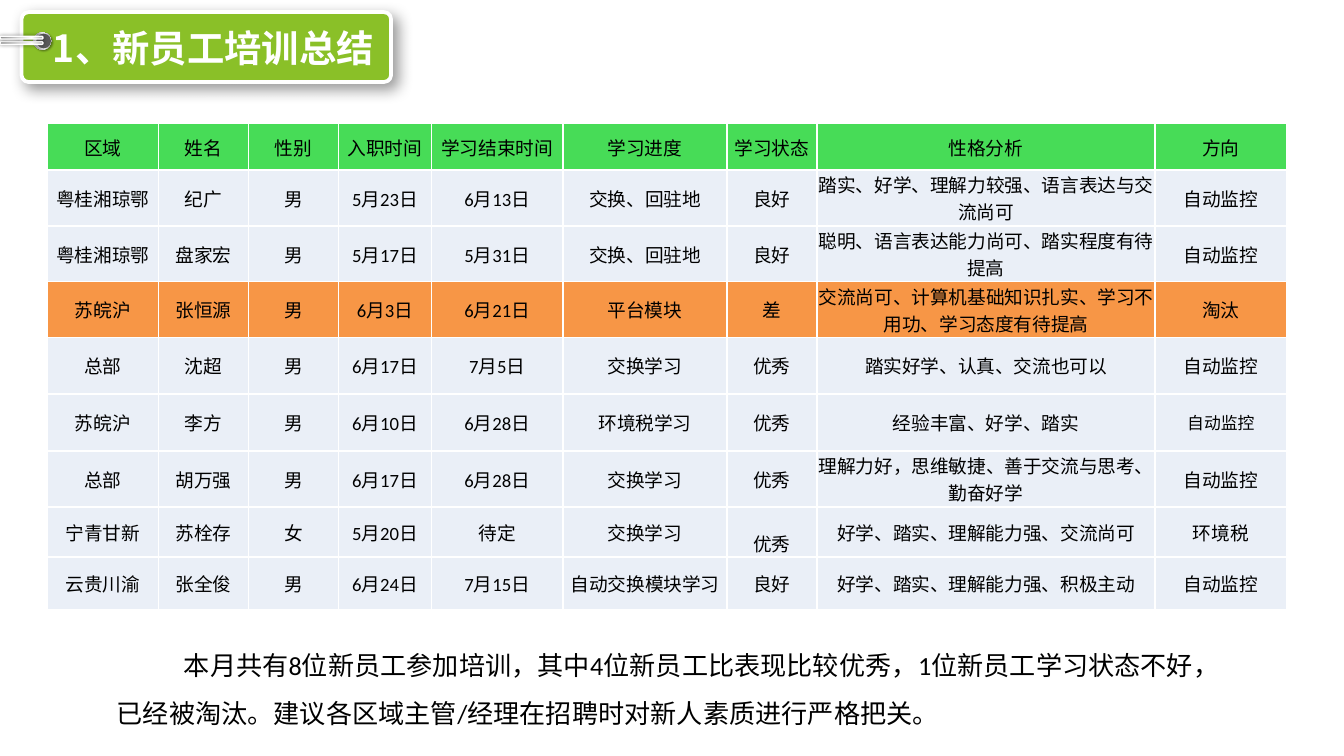
"""Build the new-employee training summary slide."""
from typing import NamedTuple

from lxml.etree import SubElement
from pptx import Presentation
from pptx.dml.color import RGBColor as RGB
from pptx.enum.shapes import MSO_SHAPE as SHAPE
from pptx.enum.text import MSO_ANCHOR as ANCHOR
from pptx.enum.text import MSO_AUTO_SIZE as FIT
from pptx.enum.text import PP_ALIGN as ALIGN
from pptx.oxml.ns import qn
from pptx.util import Pt

PX = 4572
WHITE = RGB(0xFF, 0xFF, 0xFF)
BLACK = RGB(0, 0, 0)
LIME = RGB(0x8A, 0xC0, 0x28)
GREEN = RGB(0x47, 0xDC, 0x57)
PALE = RGB(0xEA, 0xEF, 0xF7)
ORANGE = RGB(0xF7, 0x96, 0x46)
DARK = RGB(0x59, 0x59, 0x59)
GREY = RGB(0x80, 0x80, 0x80)
STEEL = RGB(0xA6, 0xA6, 0xA6)
SILVER = RGB(0xD9, 0xD9, 0xD9)
LIGHT = RGB(0xF2, 0xF2, 0xF2)
LATIN, HAN = "Calibri", "Noto Sans CJK SC"


class Box(NamedTuple):
    left: int
    top: int
    width: int
    height: int

    def emu(self) -> list[int]:
        return [n * PX for n in self]


class Shade(NamedTuple):
    blur: int
    dist: int
    angle: int


class Grad(NamedTuple):
    stops: tuple
    angle: int


class Part(NamedTuple):
    kind: SHAPE
    box: Box
    fill: RGB | Grad
    line: float = 0
    shade: Shade | None = None
    turn: int = 0
    round: float | None = None


class Style(NamedTuple):
    size: int
    color: RGB = BLACK
    font: str = LATIN
    bold: bool = False


RING = Grad(((0, WHITE), (17, STEEL), (35, LIGHT), (55, STEEL),
             (75, LIGHT), (100, STEEL)), 45)
METAL = Grad(((0, GREY), (23, STEEL), (52, SILVER), (74, WHITE), (100, STEEL)), 90)
PLATE = Part(SHAPE.ROUNDED_RECTANGLE, Box(32, 18, 550, 104), LIME, 2,
             Shade(8, 4, 45), round=0.1)
HOLE = [Part(SHAPE.OVAL, Box(50, 48, 26, 26), RING, shade=Shade(1, 1, 45), turn=270),
        Part(SHAPE.OVAL, Box(54, 50, 22, 22), DARK, turn=270)]
PINS = [Part(SHAPE.ROUNDED_RECTANGLE, Box(30, top, 4, 64), METAL, 0.75,
             Shade(2, 0, 0), 270, 0.5) for top in (32, 24)]

COLS = [166, 134, 134, 138, 196, 244, 134, 503, 196]
ROWS = [69, 83, 83, 83, 84, 85, 84, 74, 79]
DATA = [
    ("区域", "姓名", "性别", "入职时间", "学习结束时间", "学习进度", "学习状态",
     "性格分析", "方向"),
    ("粤桂湘琼鄂", "纪广", "男", "5月23日", "6月13日", "交换、回驻地", "良好",
     "踏实、好学、理解力较强、语言表达与交流尚可", "自动监控"),
    ("粤桂湘琼鄂", "盘家宏", "男", "5月17日", "5月31日", "交换、回驻地", "良好",
     "聪明、语言表达能力尚可、踏实程度有待提高", "自动监控"),
    ("苏皖沪", "张恒源", "男", "6月3日", "6月21日", "平台模块", "差",
     "交流尚可、计算机基础知识扎实、学习不用功、学习态度有待提高", "淘汰"),
    ("总部", "沈超", "男", "6月17日", "7月5日", "交换学习", "优秀",
     "踏实好学、认真、交流也可以", "自动监控"),
    ("苏皖沪", "李方", "男", "6月10日", "6月28日", "环境税学习", "优秀",
     "经验丰富、好学、踏实", "自动监控"),
    ("总部", "胡万强", "男", "6月17日", "6月28日", "交换学习", "优秀",
     "理解力好，思维敏捷、善于交流与思考、勤奋好学", "自动监控"),
    ("宁青甘新", "苏栓存", "女", "5月20日", "待定", "交换学习", "优秀",
     "好学、踏实、理解能力强、交流尚可", "环境税"),
    ("云贵川渝", "张全俊", "男", "6月24日", "7月15日", "自动交换模块学习", "良好",
     "好学、踏实、理解能力强、积极主动", "自动监控"),
]
TINTS = {0: GREEN, 3: ORANGE}
SMALL, LOW = (5, 8), (7, 6)
NOTE = ("本月共有8位新员工参加培训，其中4位新员工比表现比较优秀，1位新员工学习状态不好，"
        "已经被淘汰。建议各区域主管/经理在招聘时对新人素质进行严格把关。")


def tint(node, color: RGB):
    """Add a colour element to a node."""
    return SubElement(node, qn("a:srgbClr"), val=str(color))


def blend(shape, grad: Grad) -> None:
    """Fill a shape with a linear gradient."""
    shape.fill.gradient()
    node = shape.element.spPr.find(qn("a:gradFill"))
    stops = node.find(qn("a:gsLst"))
    for old in list(stops):
        stops.remove(old)
    for pos, color in grad.stops:
        tint(SubElement(stops, qn("a:gs"), pos=str(pos * 1000)), color)
    node.find(qn("a:lin")).set("ang", str(grad.angle * 60000))


def cast(shape, shade: Shade) -> None:
    """Give a shape a soft black outer shadow."""
    node = SubElement(shape.element.spPr.find(qn("a:effectLst")), qn("a:outerShdw"),
                      blurRad=str(Pt(shade.blur)), dist=str(Pt(shade.dist)),
                      dir=str(shade.angle * 60000), algn="ctr", rotWithShape="0")
    SubElement(tint(node, BLACK), qn("a:alpha"), val="40000")


def draw(shapes, part: Part) -> None:
    """Draw one part of the title plate."""
    shape = shapes.add_shape(part.kind, *part.box.emu())
    shape.rotation = part.turn
    shape.shadow.inherit = False
    if part.round is not None:
        shape.adjustments[0] = part.round
    if isinstance(part.fill, Grad):
        blend(shape, part.fill)
    else:
        shape.fill.solid()
        shape.fill.fore_color.rgb = part.fill
    if part.line:
        shape.line.color.rgb = WHITE
        shape.line.width = Pt(part.line)
    else:
        shape.line.fill.background()
    if part.shade:
        cast(shape, part.shade)


def write(para, text: str, style: Style) -> None:
    """Add one styled run to a paragraph."""
    run = para.add_run()
    run.text = text
    font = run.font
    font.name, font.size, font.bold = style.font, Pt(style.size), style.bold
    font.color.rgb = style.color
    SubElement(run._r.get_or_add_rPr(), qn("a:ea"), typeface=HAN)


def label(shapes, box: Box, text: str, style: Style):
    """Add a wrapping text box and return its paragraph."""
    frame = shapes.add_textbox(*box.emu()).text_frame
    frame.word_wrap = True
    frame.auto_size = FIT.SHAPE_TO_FIT_TEXT
    para = frame.paragraphs[0]
    write(para, text, style)
    return para


def edge(cell) -> None:
    """Draw white borders on all sides of a cell."""
    props = cell._tc.get_or_add_tcPr()
    for i, side in enumerate("LRTB"):
        line = SubElement(props, qn(f"a:ln{side}"), w=str(Pt(1)))
        tint(SubElement(line, qn("a:solidFill")), WHITE)
        props.insert(i, line)


def roster(shapes, left: int, top: int) -> None:
    """Draw the table of trainees."""
    box = Box(left, top, sum(COLS), sum(ROWS))
    table = shapes.add_table(len(ROWS), len(COLS), *box.emu()).table
    for col, width in zip(table.columns, COLS):
        col.width = width * PX
    for r, (row, height) in enumerate(zip(table.rows, ROWS)):
        row.height = height * PX
        for c, cell in enumerate(row.cells):
            cell.margin_left = cell.margin_right = cell.margin_top = PX
            cell.margin_bottom = 0
            cell.vertical_anchor = ANCHOR.BOTTOM if (r, c) == LOW else ANCHOR.MIDDLE
            cell.fill.solid()
            cell.fill.fore_color.rgb = TINTS.get(r, PALE)
            edge(cell)
            para = cell.text_frame.paragraphs[0]
            para.alignment = ALIGN.CENTER
            write(para, DATA[r][c], Style(9 if (r, c) == SMALL else 10))


def main() -> None:
    """Build and save the slide."""
    deck = Presentation()
    deck.slide_width, deck.slide_height = 2000 * PX, 1125 * PX
    shapes = deck.slides.add_slide(deck.slide_layouts[6]).shapes
    draw(shapes, PLATE)
    for parts in (HOLE, PINS):
        group = shapes.add_group_shape()
        for part in parts:
            draw(group.shapes, part)
    title = label(shapes, Box(32, 28, 572, 88), "1、新员工培训总结",
                  Style(20, WHITE, HAN, True))
    title.alignment = ALIGN.CENTER
    roster(shapes, 70, 184)
    note = label(shapes, Box(154, 934, 1694, 154), NOTE, Style(14))
    note.line_spacing = 1.5
    note._p.get_or_add_pPr().set("indent", str(100 * PX))
    deck.save("out.pptx")


if __name__ == "__main__":
    main()
